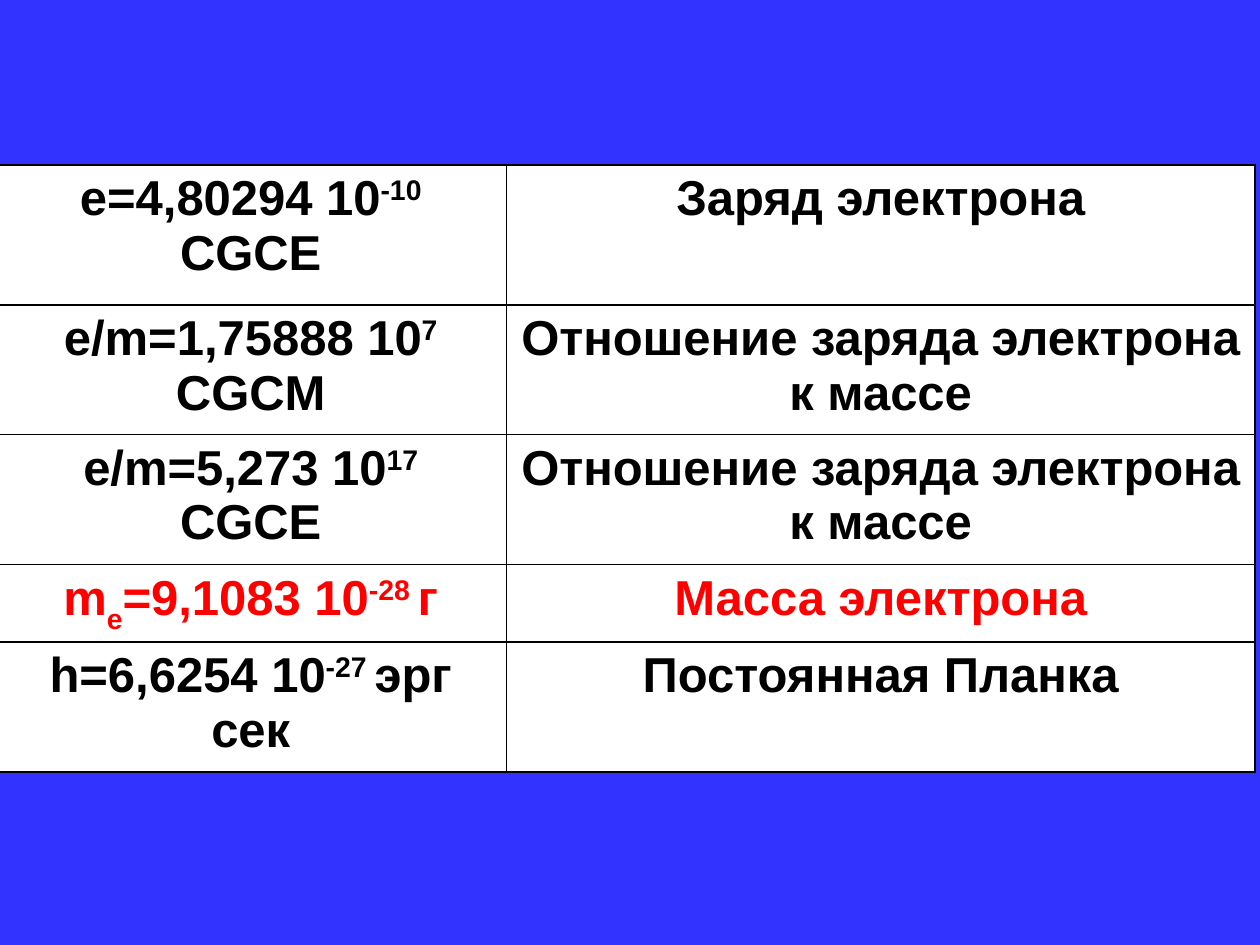
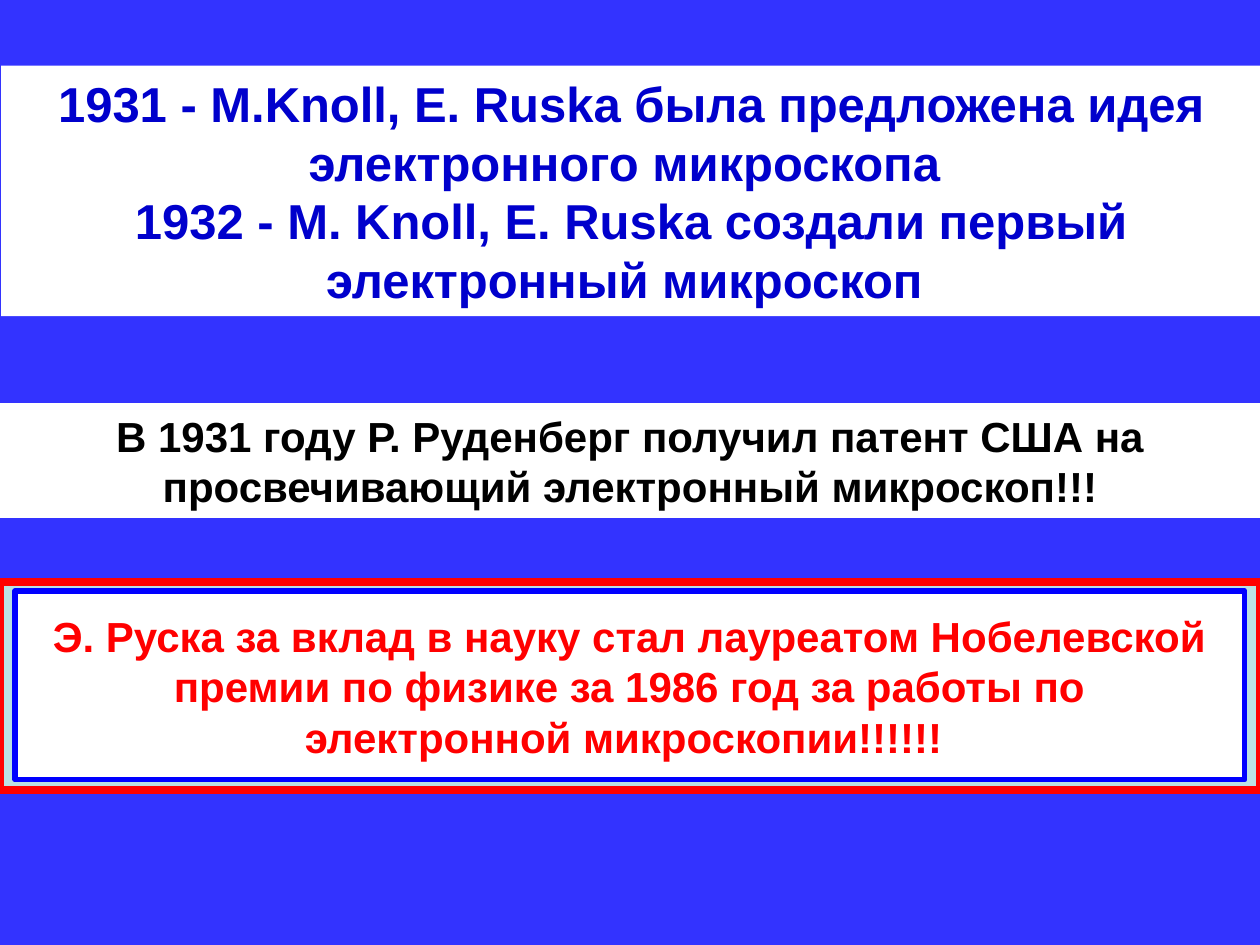
from pptx import Presentation
from pptx.dml.color import RGBColor
from pptx.enum import shapes as kinds, text as t
from pptx.oxml import parse_xml
from pptx.oxml.ns import nsdecls
from pptx.util import Inches, Pt

FONT = "Arial"
BACK, WHITE, BLACK, RED = "3333FF", "FFFFFF", "000000", "FF0000"
NAVY, BLUE, PALE = "0000CC", "0000FF", "BBE0E3"
COLS = [4.06, 5.94]
ROWS = [
    (1.11, BLACK, [("e=4,80294 10", 0), ("-10", 30), (" CGCE", 0)], "Заряд электрона"),
    (1.03, BLACK, [("e/m=1,75888 10", 0), ("7", 30), (" CGCM", 0)],
     "Отношение заряда электрона к массе"),
    (1.03, BLACK, [("e/m=5,273 10", 0), ("17", 30), (" CGCE", 0)],
     "Отношение заряда электрона к массе"),
    (0.57, RED, [("m", 0), ("e", -30), ("=9,1083 10", 0), ("-28 ", 30), ("г", 0)],
     "Масса электрона"),
    (1.03, BLACK, [("h=6,6254 10", 0), ("-27 ", 30), ("эрг сек", 0)],
     "Постоянная Планка"),
]


def paint(color, hue):
    color.rgb = RGBColor.from_string(hue)


def fill(item, hue):
    item.fill.solid()
    paint(item.fill.fore_color, hue)


def style(par, size, hue):
    par.alignment = t.PP_ALIGN.CENTER
    for run in par.runs:
        run.font.name = FONT
        run.font.size = Pt(size)
        run.font.bold = True
        paint(run.font.color, hue)


def add_slide(deck):
    slide = deck.slides.add_slide(deck.slide_layouts[6])
    fill(slide.background, BACK)
    return slide


def add_box(slide, area, hue, edge=None, width=0):
    box = slide.shapes.add_shape(kinds.MSO_SHAPE.RECTANGLE, *map(Inches, area))
    box.shadow.inherit = False
    fill(box, hue)
    if edge:
        paint(box.line.color, edge)
        box.line.width = Pt(width)
    else:
        box.line.fill.background()
    return box


def write(box, lines, size, hue):
    frame = box.text_frame
    frame.text = "\n".join(lines)
    frame.word_wrap = True
    frame.vertical_anchor = t.MSO_ANCHOR.MIDDLE
    for par in frame.paragraphs:
        style(par, size, hue)


def border(cell):
    props = cell._tc.get_or_add_tcPr()
    for at, side in enumerate(("lnL", "lnR", "lnT", "lnB")):
        props.insert(at, parse_xml(
            f'<a:{side} {nsdecls("a")} w="{Pt(1)}"><a:solidFill>'
            f'<a:srgbClr val="{BLACK}"/></a:solidFill></a:{side}>'))


def set_cell(cell, parts, hue):
    par = cell.text_frame.paragraphs[0]
    for words, shift in parts:
        run = par.add_run()
        run.text = words
        if shift:
            run._r.get_or_add_rPr().set("baseline", str(shift * 1000))
    style(par, 28, hue)
    fill(cell, WHITE)
    border(cell)


def add_values(slide):
    high = sum(row[0] for row in ROWS)
    area = map(Inches, (-0.04, 1.31, sum(COLS), high))
    table = slide.shapes.add_table(len(ROWS), len(COLS), *area).table
    for col, wide in zip(table.columns, COLS):
        col.width = Inches(wide)
    for at, (tall, hue, value, name) in enumerate(ROWS):
        table.rows[at].height = Inches(tall)
        set_cell(table.cell(at, 0), value, hue)
        set_cell(table.cell(at, 1), [(name, 0)], hue)


def add_story(slide):
    add_box(slide, (0, 4.62, 10, 1.65), PALE, RED, 4.5)
    add_box(slide, (0.12, 4.69, 9.76, 1.5), WHITE, BLUE, 3)
    idea = add_box(slide, (0.01, 0.52, 10, 1.99), WHITE)
    write(idea, ["1931 - M.Knoll, E. Ruska была предложена идея электронного микроскопа ",
                 "1932 - M. Knoll, E. Ruska создали первый электронный микроскоп "], 28, NAVY)
    patent = add_box(slide, (0, 3.2, 10, 0.91), WHITE)
    write(patent, ["В 1931 году Р. Руденберг получил патент США на "
                   "просвечивающий электронный микроскоп!!!"], 24, BLACK)
    prize = slide.shapes.add_textbox(*map(Inches, (0.27, 4.79, 9.45, 1.31)))
    write(prize, ["Э. Руска за вклад в науку стал лауреатом Нобелевской премии по физике "
                  "за 1986 год за работы по электронной микроскопии!!!!!! "], 24, RED)


def main():
    deck = Presentation()
    deck.slide_width, deck.slide_height = Inches(10), Inches(7.5)
    add_values(add_slide(deck))
    add_story(add_slide(deck))
    deck.save("out.pptx")


if __name__ == "__main__":
    main()
